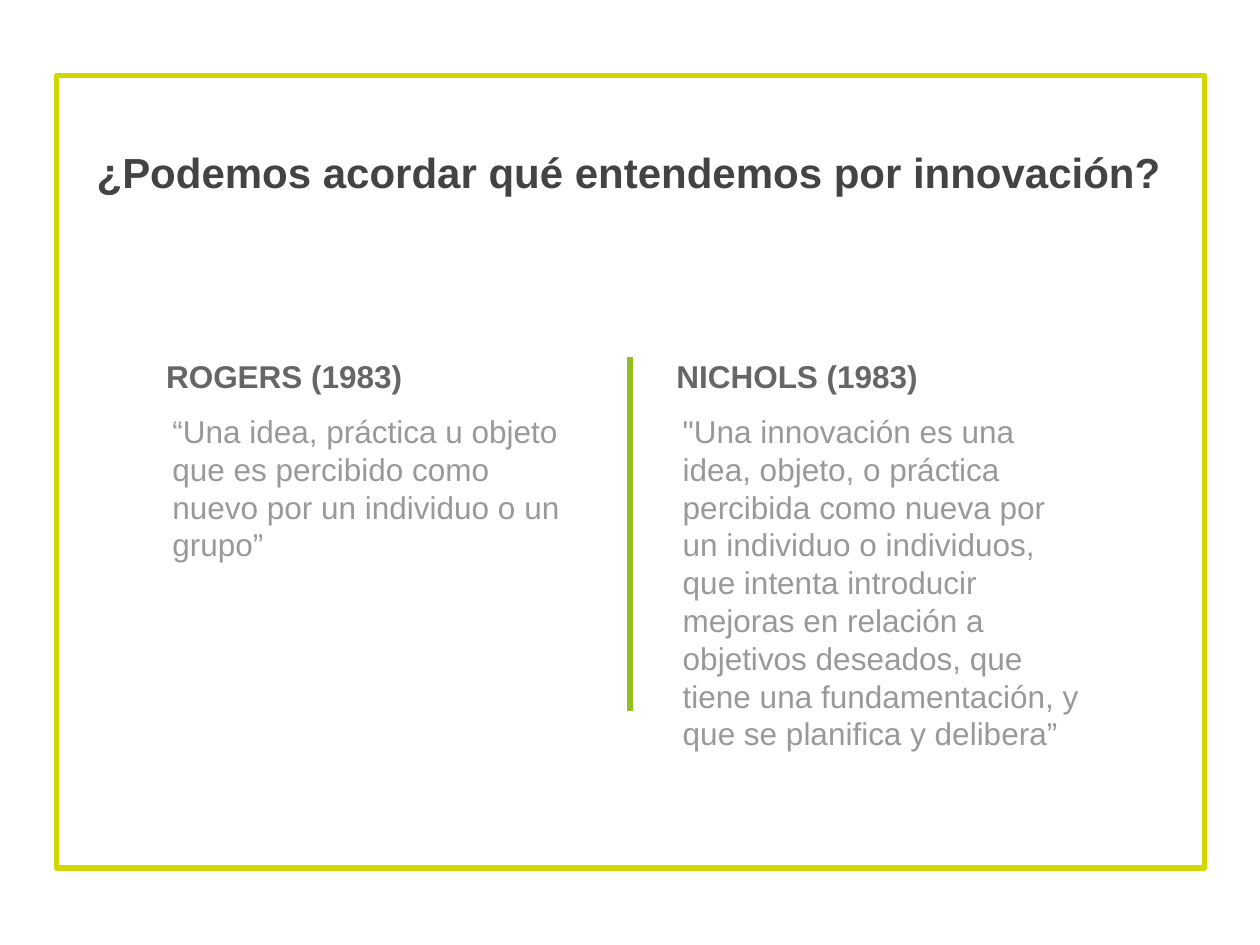
from dataclasses import dataclass

from lxml.etree import SubElement
from pptx import Presentation
from pptx.dml.color import RGBColor
from pptx.enum.shapes import MSO_CONNECTOR as Link, MSO_SHAPE as Form
from pptx.enum.text import MSO_ANCHOR as Anchor, PP_ALIGN as Align
from pptx.oxml.ns import qn
from pptx.slide import Slide
from pptx.util import Inches, Pt

WIDE, HIGH = Inches(10), Inches(7.5)
FONT = "Arial"
LIME = RGBColor(0xD2, 0xD7, 0x00)
GREEN = RGBColor(0x93, 0xC0, 0x1F)
DARK = RGBColor(0x43, 0x43, 0x43)
GRAY = RGBColor(0x66, 0x66, 0x66)
PALE = RGBColor(0x99, 0x99, 0x99)


@dataclass(frozen=True)
class Box:
    """A place on the slide, in percent of its width and height."""
    left: float
    top: float
    wide: float
    high: float

    def place(self) -> tuple[int, int, int, int]:
        return (across(self.left), down(self.top),
                across(self.wide), down(self.high))


@dataclass(frozen=True)
class Style:
    size: int
    color: RGBColor
    bold: bool = False
    align: Align = Align.LEFT
    anchor: Anchor = Anchor.TOP


@dataclass(frozen=True)
class Quote:
    left: float
    author: str
    words: str


TITLE = Style(24, DARK, bold=True, align=Align.CENTER)
HEAD = Style(18, GRAY, bold=True, anchor=Anchor.BOTTOM)
BODY = Style(18, PALE)

QUOTES = (
    Quote(12.2, "ROGERS (1983)",
          "“Una idea, práctica u objeto que es percibido como nuevo "
          "por un individuo o un grupo”"),
    Quote(52.7, "NICHOLS (1983)",
          '"Una innovación es una idea, objeto, o práctica percibida como '
          "nueva por un individuo o individuos, que intenta introducir "
          "mejoras en relación a objetivos deseados, que tiene una "
          "fundamentación, y que se planifica y delibera”"),
)


def across(share: float) -> int:
    return round(WIDE * share / 100)


def down(share: float) -> int:
    return round(HIGH * share / 100)


def write(slide: Slide, box: Box, text: str, style: Style) -> None:
    frame = slide.shapes.add_textbox(*box.place()).text_frame
    frame.word_wrap = True
    frame.vertical_anchor = style.anchor
    frame.margin_left = frame.margin_right = Inches(0.1)
    frame.margin_top = frame.margin_bottom = Inches(0.1)
    para = frame.paragraphs[0]
    para.text = text
    para.alignment = style.align
    font = para.font
    font.name, font.size, font.bold = FONT, Pt(style.size), style.bold
    font.color.rgb = style.color


def border(slide: Slide, box: Box) -> None:
    rect = slide.shapes.add_shape(Form.RECTANGLE, *box.place())
    rect.shadow.inherit = False
    rect.fill.background()
    rect.line.color.rgb = LIME
    rect.line.width = Pt(3)
    SubElement(rect.line._get_or_add_ln(), qn("a:round"))


def divide(slide: Slide, left: float, top: float, end: float) -> None:
    rule = slide.shapes.add_connector(
        Link.STRAIGHT, across(left), down(top), across(left), down(end))
    rule.line.color.rgb = GREEN
    rule.line.width = Pt(3)
    SubElement(rule._element.spPr, qn("a:effectLst"))


def show(slide: Slide, quote: Quote) -> None:
    write(slide, Box(quote.left, 30.53, 34.7, 12.53), quote.author, HEAD)
    write(slide, Box(quote.left + 0.5, 42.27, 33.9, 41.33), quote.words, BODY)


def main() -> None:
    deck = Presentation()
    deck.slide_width, deck.slide_height = WIDE, HIGH
    slide = deck.slides.add_slide(deck.slide_layouts[6])

    # Frame and title
    border(slide, Box(4.5, 8, 91.1, 83.87))
    write(slide, Box(-0.1, 14.13, 100, 9.33),
          "¿Podemos acordar qué entendemos por innovación?", TITLE)

    # Two definitions, with a rule between them
    for quote in QUOTES:
        show(slide, quote)
    divide(slide, 50, 37.73, 75.2)

    deck.save("out.pptx")


if __name__ == "__main__":
    main()
